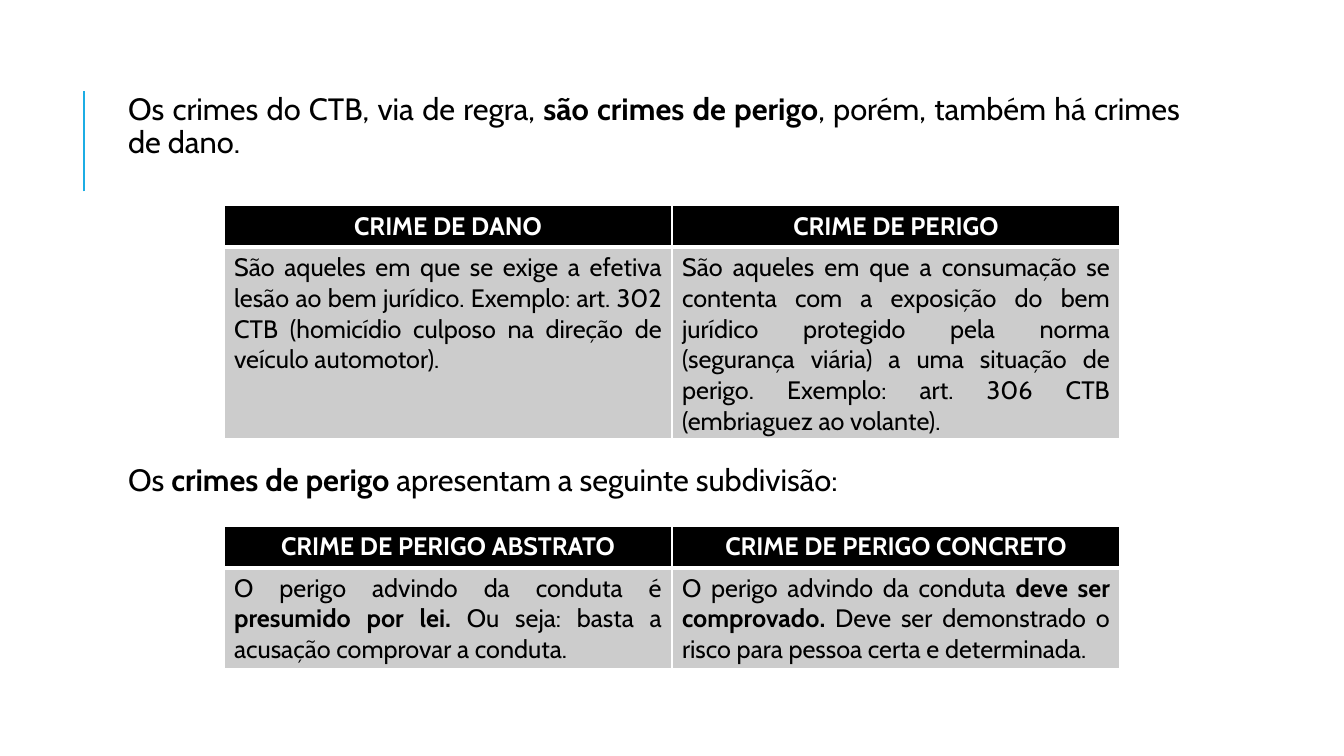
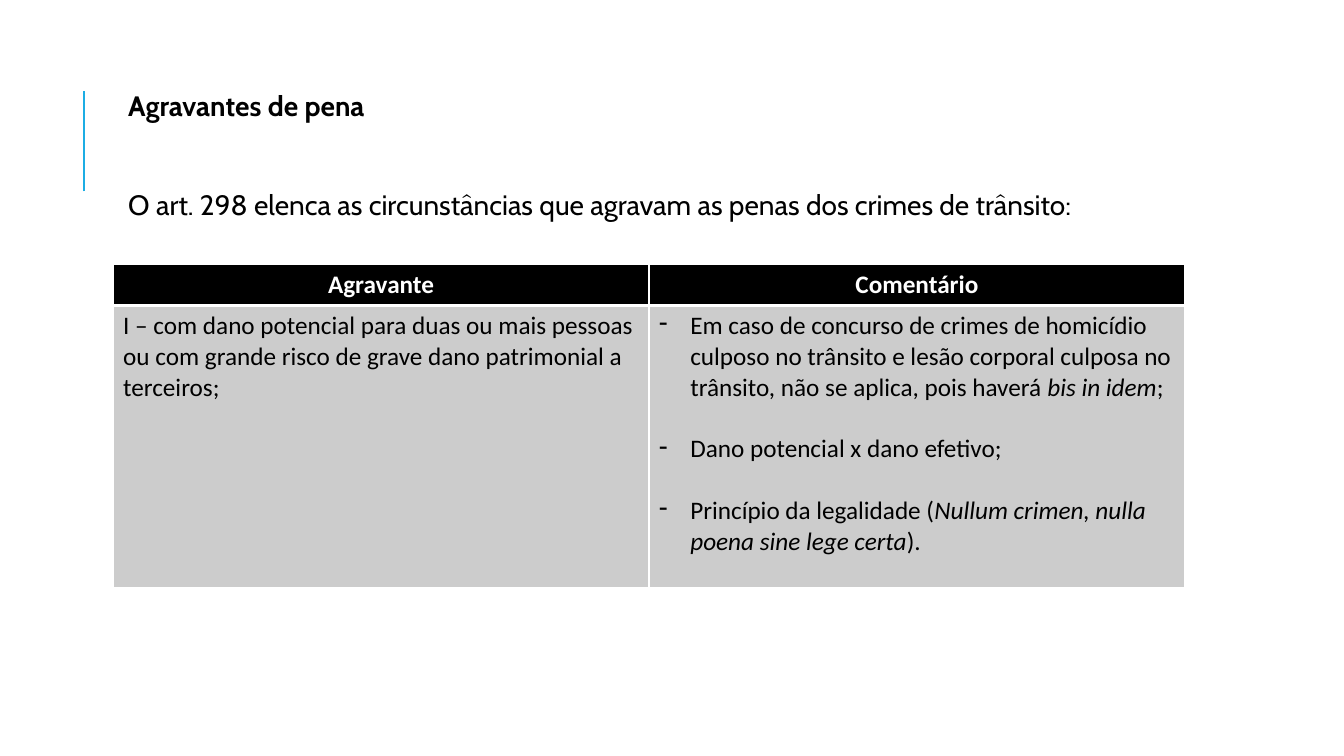
from dataclasses import dataclass

from lxml.etree import SubElement
from pptx import Presentation
from pptx.dml.color import RGBColor
from pptx.enum.shapes import MSO_CONNECTOR
from pptx.enum.text import PP_ALIGN
from pptx.oxml.ns import qn
from pptx.util import Inches, Pt

WIDE, HIGH = Inches(13.33), Inches(7.5)


@dataclass(frozen=True)
class Theme:
    accent: str = "1CADE4"
    black: str = "000000"
    white: str = "FFFFFF"
    grey: str = "CCCCCC"
    face: str = "Cabin"
    plain: str = "Calibri"
    lead: int = 22
    body: int = 20
    cell: int = 18


THEME = Theme()


def col(count):
    """Width of so many of the slide's twelve columns."""
    return round(WIDE * count / 12)


def row(share):
    """Height as a percentage of the slide."""
    return round(HIGH * share / 100)


def tint(code):
    return RGBColor.from_string(code)


def write(para, text, size, face=THEME.face, color=THEME.black,
          align=PP_ALIGN.JUSTIFY, bold=False, mark="bold"):
    """Fill a paragraph; text between bars gets the mark, bold or italic."""
    para.alignment = align
    font = para.font
    font.size, font.name, font.bold = Pt(size), face, bold
    font.color.rgb = tint(color)
    for place, part in enumerate(text.split("|")):
        run = para.add_run()
        run.text = part
        if place % 2:
            setattr(run.font, mark, True)


def add_text(slide, top, height, lines, size, gap=0):
    """Add a text box; each line is a text and whether it is bold."""
    box = slide.shapes.add_textbox(col(1.01), row(top), col(9.57), row(height))
    frame = box.text_frame
    frame.word_wrap = True
    frame.margin_left = Inches(0.15)
    frame.margin_top = frame.margin_right = frame.margin_bottom = Inches(0.05)
    for place, (text, bold) in enumerate(lines):
        para = frame.add_paragraph() if place else frame.paragraphs[0]
        para.line_spacing = 0.9
        para.space_before = Pt(gap if place else 0)
        write(para, text, size, bold=bold)


def dash(para):
    """Give a paragraph a hanging dash."""
    props = para._p.get_or_add_pPr()
    props.set("marL", str(Inches(0.31)))
    props.set("indent", str(-Inches(0.31)))
    bullet = props.makeelement(qn("a:buChar"), {"char": "-"})
    props.insert_element_before(bullet, "a:tabLst", "a:defRPr", "a:extLst")


def edge(cell, top=1, bottom=1):
    """Draw white cell borders, widths in points."""
    props = cell._tc.get_or_add_tcPr()
    sides = (("L", 1), ("R", 1), ("T", top), ("B", bottom))
    for side, width in sides:
        line = SubElement(props, qn(f"a:ln{side}"), w=str(Pt(width)))
        fill = SubElement(line, qn("a:solidFill"))
        SubElement(fill, qn("a:srgbClr"), val=THEME.white)


def paint(cell, color):
    cell.fill.solid()
    cell.fill.fore_color.rgb = tint(color)


def add_grid(slide, left, top, width, height, heads, texts,
             face=THEME.face, align=PP_ALIGN.JUSTIFY):
    """Add a two-row table; a list in place of a text becomes dashed items."""
    frame = slide.shapes.add_table(2, len(heads), col(left), row(top),
                                   col(width), row(height))
    table = frame.table
    table.rows[0].height = row(5.5)
    table.rows[1].height = row(height - 5.5)
    for place, (head, text) in enumerate(zip(heads, texts)):
        cell = table.cell(0, place)
        edge(cell, bottom=3)
        paint(cell, THEME.black)
        write(cell.text_frame.paragraphs[0], head, THEME.cell, face,
              THEME.white, PP_ALIGN.CENTER, bold=True)

        cell = table.cell(1, place)
        edge(cell, top=3)
        paint(cell, THEME.grey)
        listed = isinstance(text, list)
        body = cell.text_frame
        for index, item in enumerate(text if listed else [text]):
            para = body.add_paragraph() if index else body.paragraphs[0]
            write(para, item, THEME.cell, face, align=align,
                  mark="italic" if listed else "bold")
            if listed:
                para.space_before = Pt(22 if index else 0)
                dash(para)


def add_page(deck):
    """Add a blank slide with the accent line at its left."""
    slide = deck.slides.add_slide(deck.slide_layouts[6])
    line = slide.shapes.add_connector(MSO_CONNECTOR.STRAIGHT, col(0.75),
                                      row(25.33), col(0.75), row(12))
    line.line.color.rgb = tint(THEME.accent)
    line.line.width = Pt(1.5)
    SubElement(line._element.spPr, qn("a:effectLst"))
    return slide


def add_crimes(deck):
    slide = add_page(deck)
    add_text(slide, 11.7, 10.8, [(
        "Os crimes do CTB, via de regra, |são crimes de perigo|, porém, "
        "também há crimes de dano.", False)], THEME.lead)
    add_text(slide, 60.8, 6.5, [(
        "Os |crimes de perigo |apresentam a seguinte subdivisão:", False)],
        THEME.lead)
    add_grid(slide, 2, 27.2, 8, 30.8, ("CRIME DE DANO", "CRIME DE PERIGO"), (
        "São aqueles em que se exige a efetiva lesão ao bem jurídico. "
        "Exemplo: art. 302 CTB (homicídio culposo na direção de veículo "
        "automotor).",
        "São aqueles em que a consumação se contenta com a exposição do bem "
        "jurídico protegido pela norma (segurança viária) a uma situação de "
        "perigo. Exemplo: art. 306 CTB (embriaguez ao volante)."))
    add_grid(slide, 2, 69.6, 8, 18.7,
             ("CRIME DE PERIGO ABSTRATO", "CRIME DE PERIGO CONCRETO"), (
                 "O perigo advindo da conduta é |presumido por lei.| Ou seja: "
                 "basta a acusação comprovar a conduta.",
                 "O perigo advindo da conduta |deve ser comprovado.| Deve ser "
                 "demonstrado o risco para pessoa certa e determinada."))


def add_causes(deck):
    slide = add_page(deck)
    add_text(slide, 11.6, 20, [
        ("Agravantes de pena", True),
        ("O art. 298 elenca as circunstâncias que agravam as penas dos "
         "crimes de trânsito:", False)], THEME.body, gap=49)
    add_grid(slide, 1.01, 34.93, 9.57, 42.8, ("Agravante", "Comentário"), (
        "I – com dano potencial para duas ou mais pessoas ou com grande "
        "risco de grave dano patrimonial a terceiros;",
        ["Em caso de concurso de crimes de homicídio culposo no trânsito e "
         "lesão corporal culposa no trânsito, não se aplica, pois haverá "
         "|bis in idem|;",
         "Dano potencial x dano efetivo;",
         "Princípio da legalidade (|Nullum crimen, nulla poena sine lege "
         "certa|)."]), THEME.plain, PP_ALIGN.LEFT)


def main():
    deck = Presentation()
    deck.slide_width, deck.slide_height = WIDE, HIGH
    add_crimes(deck)
    add_causes(deck)
    deck.save("out.pptx")


if __name__ == "__main__":
    main()
